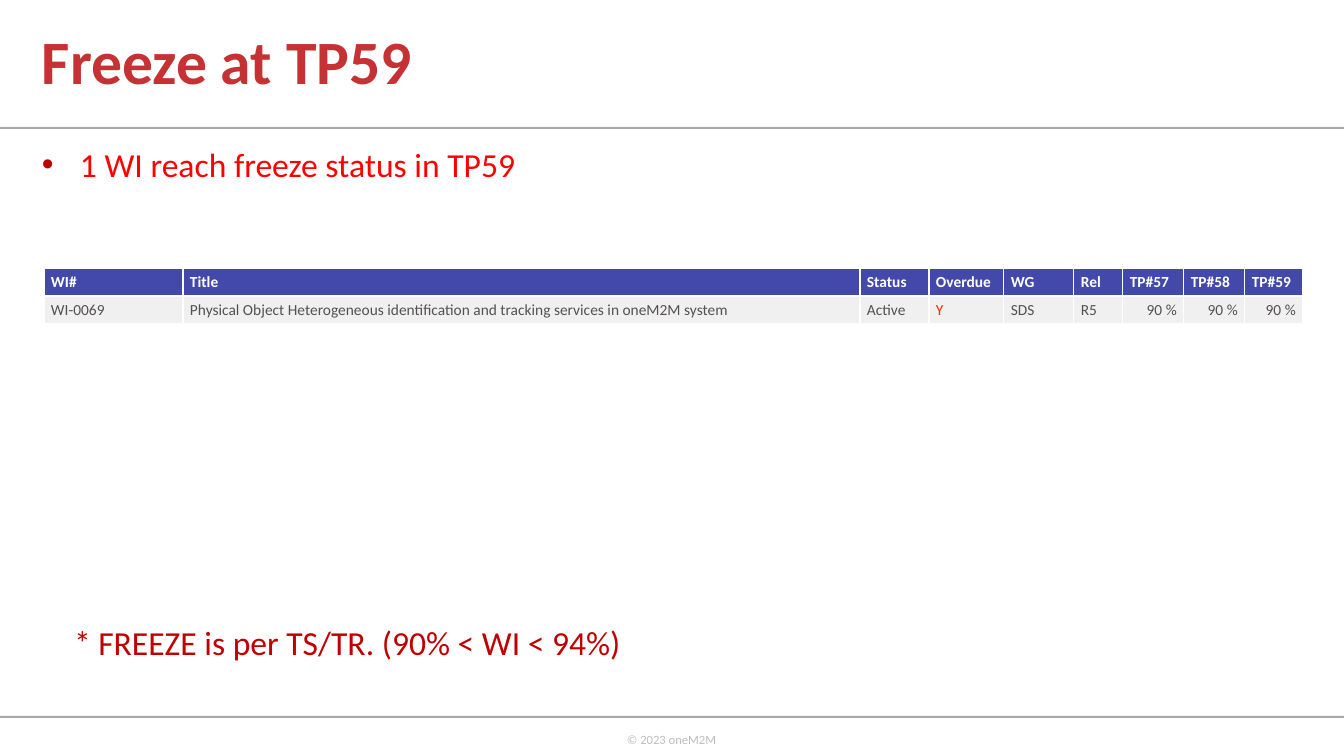
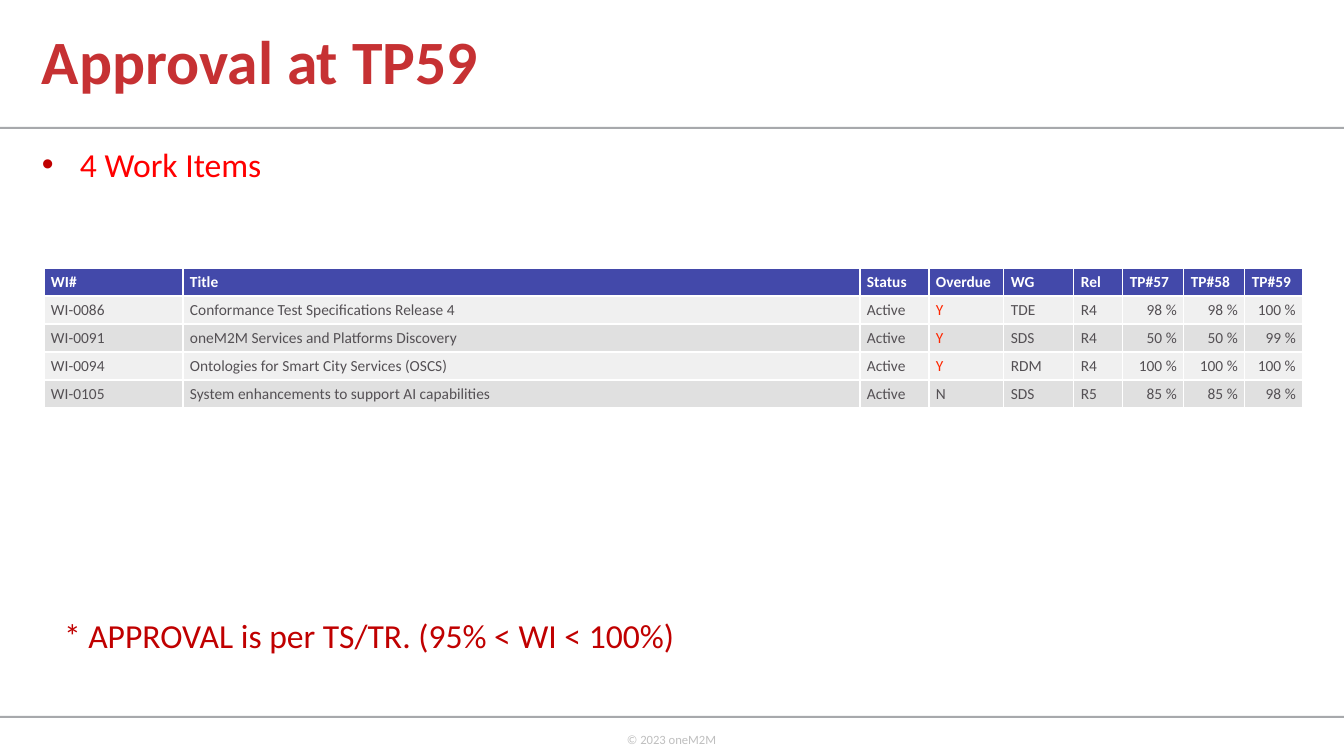
from lxml import etree
from pptx import Presentation
from pptx.dml.color import RGBColor
from pptx.enum.shapes import MSO_SHAPE
from pptx.enum.text import MSO_ANCHOR, MSO_AUTO_SIZE, PP_ALIGN
from pptx.oxml import parse_xml
from pptx.oxml.ns import nsdecls, qn
from pptx.util import Emu, Pt

PX = 914400 / 100.8
WIDTH, HEIGHT = 1344, 756
FONT = "Calibri"
TITLE_RED, DARK_RED, BRIGHT_RED, OVERDUE_RED = "C63133", "C00000", "FF0000", "FF2600"
RULE_GRAY, FOOTER_GRAY, CELL_TEXT = "A7A9AC", "BFBFBF", "545054"
HEADER_BLUE, WHITE = "4349AA", "FFFFFF"
BANDS = ["F0F0F0", "E0E0E0"]

HEADER = ["WI#", "Title", "Status", "Overdue", "WG", "Rel", "TP#57", "TP#58", "TP#59"]
COL_WIDTHS = [139, 677, 69, 75, 70, 49, 61, 61, 58]
OVERDUE_COL, FIRST_PERCENT_COL = 3, 6
ROW_HEIGHT = 28

SLIDES = [
    ("Freeze at TP59", "1 WI reach freeze status in TP59",
     "* FREEZE is per TS/TR. (90% < WI < 94%)", (69, 617),
     [("WI-0069", "Physical Object Heterogeneous identification and tracking services in oneM2M system",
       "Active", "Y", "SDS", "R5", 90, 90, 90)]),
    ("Approval at TP59", "4 Work Items",
     "* APPROVAL is per TS/TR. (95% < WI < 100%)", (59, 610),
     [("WI-0086", "Conformance Test Specifications Release 4",
       "Active", "Y", "TDE", "R4", 98, 98, 100),
      ("WI-0091", "oneM2M Services and Platforms Discovery",
       "Active", "Y", "SDS", "R4", 50, 50, 99),
      ("WI-0094", "Ontologies for Smart City Services (OSCS)",
       "Active", "Y", "RDM", "R4", 100, 100, 100),
      ("WI-0105", "System enhancements to support AI capabilities",
       "Active", "N", "SDS", "R5", 85, 85, 98)]),
]


def box(*lengths):
    """Turn px lengths into EMU."""
    return [Emu(round(n * PX)) for n in lengths]


def write(tf, text, size, color, bold=False):
    """Fill a text frame with one formatted paragraph and return it."""
    tf.text = text
    p = tf.paragraphs[0]
    font = p.runs[0].font
    font.name, font.size, font.bold = FONT, Pt(size), bold
    font.color.rgb = RGBColor.from_string(color)
    return p


prs = Presentation()
prs.slide_width, prs.slide_height = box(WIDTH, HEIGHT)
inset, = box(5)

for title, bullet, note, note_at, items in SLIDES:
    s = prs.slides.add_slide(prs.slide_layouts[5])

    for top in (127, 716):
        sp = s.shapes.add_shape(MSO_SHAPE.RECTANGLE, *box(0, top, WIDTH, 2))
        sp.shadow.inherit = False
        sp.fill.solid()
        sp.fill.fore_color.rgb = RGBColor.from_string(RULE_GRAY)
        sp.line.fill.background()

    sp = s.shapes.title
    sp.left, sp.top, sp.width, sp.height = box(37, 0, 866, 129)
    p = write(sp.text_frame, title, 44, TITLE_RED, bold=True)
    p.alignment, p.line_spacing = PP_ALIGN.LEFT, 0.9
    sp.text_frame.vertical_anchor = MSO_ANCHOR.MIDDLE
    sp.text_frame.auto_size = MSO_AUTO_SIZE.NONE
    frames = [sp.text_frame]

    for text, size, color, bounds in (
        ("© 2023 oneM2M", 9, FOOTER_GRAY, (622, 727, 105, 24)),
        (note, 24, DARK_RED, (*note_at, 1127, 43)),
        (bullet, 24, BRIGHT_RED, (37, 139, 799, 384)),
    ):
        tf = s.shapes.add_textbox(*box(*bounds)).text_frame
        tf.word_wrap = size > 9
        p = write(tf, text, size, color)
        frames.append(tf)
        if text == bullet:
            indent, = box(38)
            pPr = p._p.get_or_add_pPr()
            pPr.set("marL", str(indent))
            pPr.set("indent", str(-indent))
            bullet_color = etree.SubElement(pPr, qn("a:buClr"))
            etree.SubElement(bullet_color, qn("a:srgbClr"), val=DARK_RED)
            etree.SubElement(pPr, qn("a:buFont"), typeface="Arial")
            etree.SubElement(pPr, qn("a:buChar"), char="•")

    for tf in frames:
        tf.margin_left = tf.margin_right = tf.margin_top = tf.margin_bottom = inset

    rows = [HEADER, *items]
    bounds = box(44, 268, sum(COL_WIDTHS), ROW_HEIGHT * len(rows))
    table = s.shapes.add_table(len(rows), len(HEADER), *bounds).table
    for column, width in zip(table.columns, box(*COL_WIDTHS)):
        column.width = width
    for r, values in enumerate(rows):
        table.rows[r].height, = box(ROW_HEIGHT)
        for c, value in enumerate(values):
            cell = table.cell(r, c)
            is_header = r == 0
            is_percent = not is_header and c >= FIRST_PERCENT_COL
            color = WHITE if is_header else CELL_TEXT
            if c == OVERDUE_COL and value == "Y":
                color = OVERDUE_RED
            text = f"{value} %" if is_percent else value
            p = write(cell.text_frame, text, 11, color, bold=is_header)
            p.alignment = PP_ALIGN.RIGHT if is_percent else PP_ALIGN.LEFT
            cell.vertical_anchor = MSO_ANCHOR.MIDDLE
            cell.margin_left, cell.margin_right, cell.margin_top, cell.margin_bottom = box(7, 7, 0, 0)
            cell.fill.solid()
            fill = HEADER_BLUE if is_header else BANDS[(r - 1) % 2]
            cell.fill.fore_color.rgb = RGBColor.from_string(fill)
            tcPr = cell._tc.get_or_add_tcPr()
            for i, side in enumerate("LRTB"):
                tcPr.insert(i, parse_xml(
                    f'<a:ln{side} {nsdecls("a")} w="{Pt(1)}"><a:solidFill>'
                    f'<a:srgbClr val="{WHITE}"/></a:solidFill></a:ln{side}>'))

prs.save("out.pptx")
